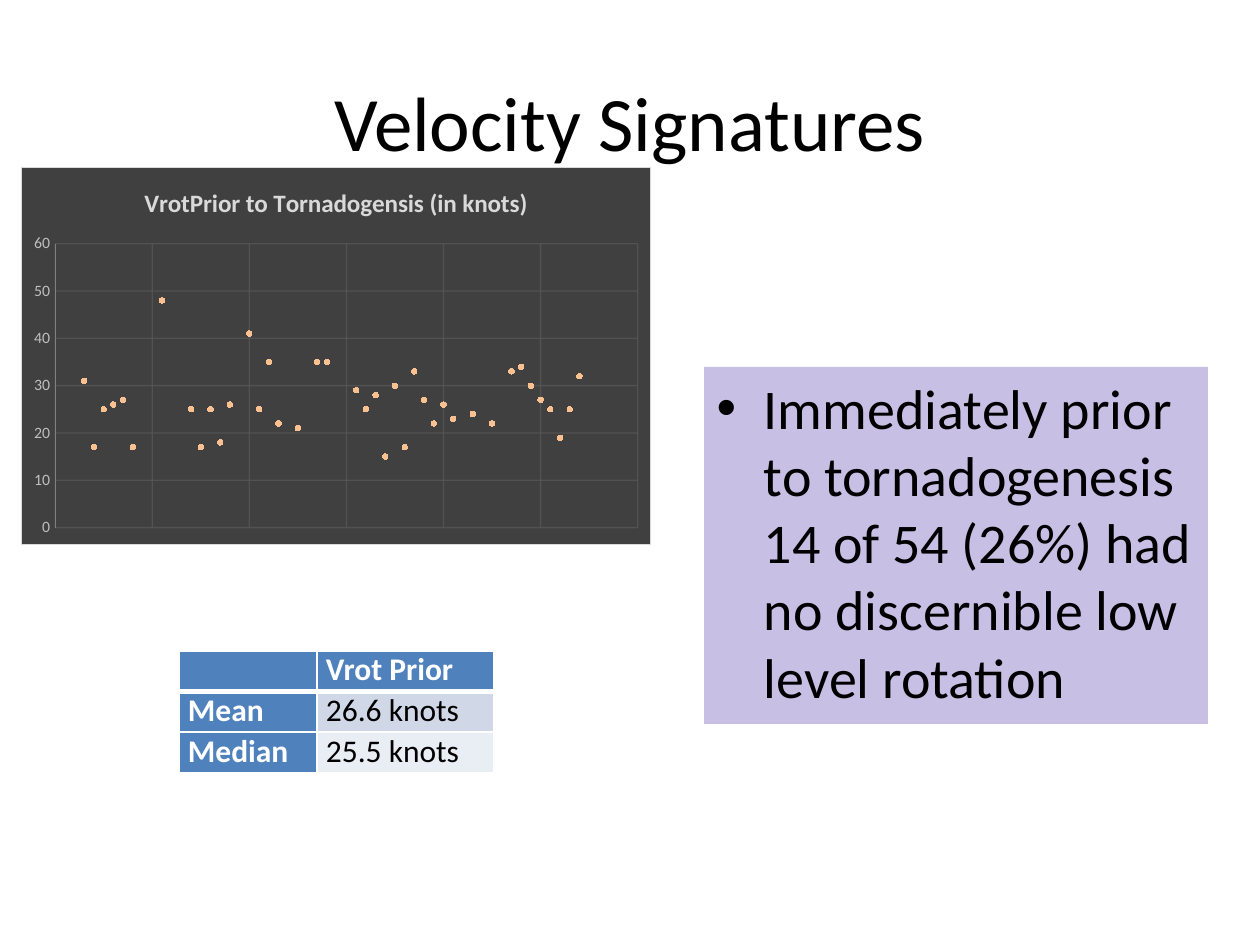
import pptx
import pptx.chart.data
import pptx.dml.color
import pptx.enum.chart
import pptx.enum.dml
import pptx.enum.text
import pptx.oxml
import pptx.oxml.ns
import pptx.util
from lxml import etree

RGB = pptx.dml.color.RGBColor
BLACK = RGB(0x00, 0x00, 0x00)
WHITE = RGB(0xFF, 0xFF, 0xFF)
PURPLE = RGB(0x20, 0x00, 0x96)
BLUE = RGB(0x4F, 0x81, 0xBD)
BAND_DARK = RGB(0xD0, 0xD8, 0xE8)
BAND_LIGHT = RGB(0xE9, 0xED, 0xF4)
CHARCOAL = RGB(0x40, 0x40, 0x40)
GRID_GRAY = RGB(0x59, 0x59, 0x59)
AXIS_GRAY = RGB(0x80, 0x80, 0x80)
LABEL_GRAY = RGB(0xBF, 0xBF, 0xBF)
LIGHT_GRAY = RGB(0xD9, 0xD9, 0xD9)
PEACH = RGB(0xFA, 0xC0, 0x90)
FONT = "Calibri"
PX_PER_INCH = 126

# Rotational velocity in knots for cases 1 to 54; None means no rotation.
SPEEDS = [
    None, None, 31, 17, 25, 26, 27, 17, None, None, 48, None, None, 25, 17, 25, 18, 26,
    None, 41, 25, 35, 22, None, 21, None, 35, 35, None, None, 29, 25, 28, 15, 30, 17,
    33, 27, 22, 26, 23, None, 24, None, 22, None, 33, 34, 30, 27, 25, 19, 25, 32,
]
SUMMARY = [["", "Vrot Prior"], ["Mean", "26.6 knots"], ["Median", "25.5 knots"]]


def px(length):
    return pptx.util.Emu(round(length * 914400 / PX_PER_INCH))


def style_font(font, size, color, bold=False):
    values = {"name": FONT, "size": pptx.util.Pt(size), "bold": bold}
    for name, value in values.items():
        setattr(font, name, value)
    font.color.rgb = color


def style_line(line, color, width=0.75):
    line.color.rgb = color
    line.width = pptx.util.Pt(width)


def set_alpha(fill, percent):
    """Make a solid fill partly transparent."""
    color = fill._xPr.find(".//" + pptx.oxml.ns.qn("a:srgbClr"))
    etree.SubElement(color, pptx.oxml.ns.qn("a:alpha"), val=str(percent * 1000))


def place(shape, box):
    for name, length in zip(("left", "top", "width", "height"), box):
        setattr(shape, name, px(length))


def fill_title(shape, box, text):
    place(shape, box)
    frame = shape.text_frame
    frame.text = text
    frame.vertical_anchor = pptx.enum.text.MSO_ANCHOR.MIDDLE
    para = frame.paragraphs[0]
    para.alignment = pptx.enum.text.PP_ALIGN.CENTER
    style_font(para.font, 44, BLACK)


def fill_finding(shape, box, text):
    place(shape, box)
    shape.fill.solid()
    shape.fill.fore_color.rgb = PURPLE
    set_alpha(shape.fill, 25)
    frame = shape.text_frame
    frame.text = text
    frame.word_wrap = True
    frame.auto_size = pptx.enum.text.MSO_AUTO_SIZE.NONE
    para = frame.paragraphs[0]
    para.space_before = pptx.util.Pt(0)
    style_font(para.font, 32, BLACK)


def style_chart_area(chart):
    area = pptx.oxml.parse_xml(
        f'<c:spPr {pptx.oxml.ns.nsdecls("c", "a")}>'
        f'<a:solidFill><a:srgbClr val="{CHARCOAL}"/></a:solidFill>'
        f'<a:ln w="9525"><a:solidFill><a:srgbClr val="{LIGHT_GRAY}"/></a:solidFill></a:ln>'
        '</c:spPr>')
    chart._chartSpace.chart.addnext(area)


def leave_gaps(chart):
    """Drop the cached points that have no value, so that they stay empty."""
    for point in chart._chartSpace.xpath(".//c:yVal//c:pt[c:v='None' or c:v='']"):
        point.getparent().remove(point)


def add_velocity_chart(page, box):
    data = pptx.chart.data.XyChartData()
    points = data.add_series("Series 1")
    for case, speed in enumerate(SPEEDS, 1):
        points.add_data_point(case, speed)
    chart = page.shapes.add_chart(
        pptx.enum.chart.XL_CHART_TYPE.XY_SCATTER, *map(px, box), data).chart
    leave_gaps(chart)
    style_font(chart.font, 10, BLACK)
    style_chart_area(chart)
    chart.has_legend = False
    chart.has_title = True
    title = chart.chart_title.text_frame
    title.text = "VrotPrior to Tornadogensis (in knots)"
    style_font(title.paragraphs[0].runs[0].font, 14.4, LIGHT_GRAY, True)

    for axis in (chart.category_axis, chart.value_axis):
        axis.minimum_scale, axis.maximum_scale, axis.major_unit = 0, 60, 10
        axis.major_tick_mark = pptx.enum.chart.XL_TICK_MARK.NONE
        axis.has_major_gridlines = True
        grid = axis.major_gridlines.format.line
        style_line(grid, GRID_GRAY)
        set_alpha(grid.fill, 75)
    chart.category_axis.visible = False
    style_line(chart.value_axis.format.line, AXIS_GRAY)
    style_font(chart.value_axis.tick_labels.font, 9, LABEL_GRAY)

    plot = chart.plots[0]
    plot.vary_by_categories = False
    series = plot.series[0]
    series.smooth = False
    series.format.line.fill.background()
    marker = series.marker
    marker.style = pptx.enum.chart.XL_MARKER_STYLE.CIRCLE
    marker.size = 3
    marker.format.fill.solid()
    marker.format.fill.fore_color.rgb = PEACH
    style_line(marker.format.line, PEACH)


def set_borders(cell, widths):
    """Draw white borders, with widths in points by side."""
    for index, (side, width) in enumerate(widths.items()):
        line = pptx.oxml.parse_xml(
            f'<a:ln{side} {pptx.oxml.ns.nsdecls("a")} w="{width * 12700}">'
            f'<a:solidFill><a:srgbClr val="{WHITE}"/></a:solidFill></a:ln{side}>')
        cell._tc.get_or_add_tcPr().insert(index, line)


def add_summary_table(page, box):
    table = page.shapes.add_table(3, 2, *map(px, box)).table
    table.first_col = True
    label_width = 138
    table.columns[0].width = px(label_width)
    table.columns[1].width = px(box[2] - label_width)
    bands = (BLUE, BAND_DARK, BAND_LIGHT)
    margins = {"margin_left": 9, "margin_right": 9, "margin_top": 0, "margin_bottom": 0}
    for row, texts in enumerate(SUMMARY):
        for column, text in enumerate(texts):
            heading = row == 0 or column == 0
            cell = table.cell(row, column)
            cell.text = text
            for name, length in margins.items():
                setattr(cell, name, px(length))
            style_font(cell.text_frame.paragraphs[0].font, 18,
                       WHITE if heading else BLACK, heading)
            cell.fill.solid()
            cell.fill.fore_color.rgb = BLUE if heading else bands[row]
            set_borders(cell, {"L": 1, "R": 1, "T": 3 if row == 1 else 1,
                               "B": 3 if row == 0 else 1})


def main():
    deck = pptx.Presentation()
    deck.slide_width, deck.slide_height = px(1260), px(945)
    page = deck.slides.add_slide(deck.slide_layouts[1])
    title, body = page.placeholders
    fill_title(title, (63, 42, 1134, 157), "Velocity Signatures")
    fill_finding(body, (704, 367, 504, 357),
                 "Immediately prior to tornadogenesis 14 of 54 (26%) had "
                 "no discernible low level rotation")
    add_summary_table(page, (179, 651, 315, 122))
    add_velocity_chart(page, (21, 167, 630, 378))
    deck.save("out.pptx")


if __name__ == "__main__":
    main()
